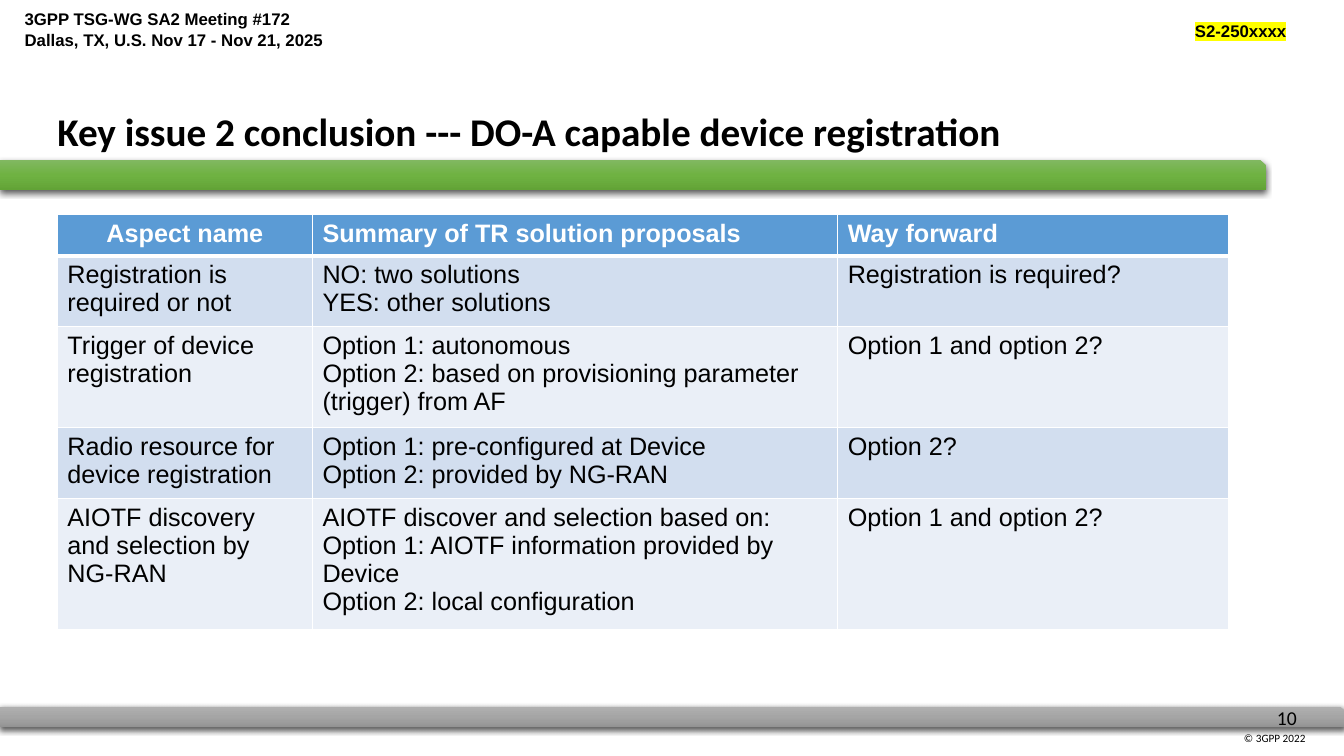
from dataclasses import dataclass

from lxml import etree
from pptx import Presentation
from pptx import util as u
from pptx.dml.color import RGBColor
from pptx.enum import shapes, text
from pptx.oxml import parse_xml
from pptx.oxml.ns import nsdecls, qn

BLACK, WHITE = "000000", "FFFFFF"
HEADER_BLUE = "5B9BD5"
BAND_FILLS = ("D2DEEF", "EAEFF7")
ALIGN = text.PP_ALIGN


@dataclass
class Bar:
    left: float
    top: float
    width: float
    height: float
    colors: tuple[str, str, str]


@dataclass
class Label:
    left: float
    top: float
    width: float
    height: float
    lines: tuple[str, ...]
    size: float
    font: str = "Calibri"
    bold: bool = False
    align: ALIGN = ALIGN.LEFT
    wrap: bool = True
    highlight: str = ""
    inset: bool = True
    line_spacing: float = 0
    anchor: text.MSO_ANCHOR = text.MSO_ANCHOR.TOP


BARS = (
    Bar(0, 505, 960, 14.4, ("AFAFAF", "A5A5A5", "939393")),
    Bar(-0.5, 114.5, 904.5, 21.5, ("81B861", "6FB242", "62A336")),
)

LABELS = (
    Label(881.5, 519, 77.5, 16.5, ("© 3GPP 2022",), 8),
    Label(905, 500.5, 31, 24.5, ("10",), 14, wrap=False),
    Label(10.5, 3, 303, 36,
          ("3GPP TSG-WG SA2 Meeting #172", "Dallas, TX, U.S. Nov 17 - Nov 21, 2025"),
          12, "Arial", True),
    Label(721.5, 11, 204.5, 21.5, ("S2-250xxxx",), 12, "Arial", True,
          ALIGN.RIGHT, highlight="FFFF00"),
    Label(41, 73, 706, 37.5,
          ("Key issue 2 conclusion --- DO-A capable device registration",),
          28, bold=True, align=ALIGN.JUSTIFY, inset=False, line_spacing=34.3,
          anchor=text.MSO_ANCHOR.BOTTOM),
)

COLUMN_WIDTHS = (182.2, 375.2, 279)
ROW_HEIGHTS = (29.2, 50.6, 72, 50.6, 93)
ROWS = (
    ("Aspect name", "Summary of TR solution proposals", "Way forward"),
    ("Registration is required or not",
     "NO: two solutions\nYES: other solutions",
     "Registration is required?"),
    ("Trigger of device registration",
     "Option 1: autonomous\n"
     "Option 2: based on provisioning parameter (trigger) from AF",
     "Option 1 and option 2?"),
    ("Radio resource for device registration",
     "Option 1: pre-configured at Device\nOption 2: provided by NG-RAN",
     "Option 2?"),
    ("AIOTF discovery and selection by NG-RAN",
     "AIOTF discover and selection based on:\n"
     "Option 1: AIOTF information provided by Device\n"
     "Option 2: local configuration",
     "Option 1 and option 2?"),
)


def rgb(color: str) -> RGBColor:
    return RGBColor.from_string(color)


def set_font(paragraph, name: str, size: float, color: str, bold: bool) -> None:
    font = paragraph.font
    font.name, font.size, font.bold = name, u.Pt(size), bold
    font.color.rgb = rgb(color)


def add_bar(slide, bar: Bar) -> None:
    """Draw a snipped bar with a vertical gradient and a soft shadow."""
    shape = slide.shapes.add_shape(
        shapes.MSO_SHAPE.SNIP_1_RECTANGLE,
        u.Pt(bar.left), u.Pt(bar.top), u.Pt(bar.width), u.Pt(bar.height))
    shape.line.fill.background()
    shape.shadow.inherit = False
    stops = "".join(
        f'<a:gs pos="{index * 50000}"><a:srgbClr val="{color}"/></a:gs>'
        for index, color in enumerate(bar.colors))
    properties = shape._element.spPr
    properties.find(qn("a:prstGeom")).addnext(parse_xml(
        f'<a:gradFill {nsdecls("a")} rotWithShape="1"><a:gsLst>{stops}</a:gsLst>'
        '<a:lin ang="5400000" scaled="0"/></a:gradFill>'))
    properties.find(qn("a:effectLst")).append(parse_xml(
        f'<a:outerShdw {nsdecls("a")} blurRad="{u.Pt(4.5)}" dist="{u.Pt(1.5)}" '
        'dir="5400000" algn="ctr" rotWithShape="0"><a:srgbClr val="000000">'
        '<a:alpha val="63000"/></a:srgbClr></a:outerShdw>'))


def add_label(slide, label: Label) -> None:
    shape = slide.shapes.add_textbox(
        u.Pt(label.left), u.Pt(label.top), u.Pt(label.width), u.Pt(label.height))
    frame = shape.text_frame
    frame.word_wrap = label.wrap
    frame.vertical_anchor = label.anchor
    if not label.inset:
        frame.margin_left = frame.margin_right = 0
        frame.margin_top = frame.margin_bottom = 0
    frame.text = "\n".join(label.lines)
    for paragraph in frame.paragraphs:
        paragraph.alignment = label.align
        if label.line_spacing:
            paragraph.line_spacing = u.Pt(label.line_spacing)
        set_font(paragraph, label.font, label.size, BLACK, label.bold)
        if label.highlight:
            run_properties = paragraph.runs[0]._r.get_or_add_rPr()
            highlight = etree.SubElement(run_properties, qn("a:highlight"))
            etree.SubElement(highlight, qn("a:srgbClr"), val=label.highlight)


def set_borders(cell, top: float, bottom: float) -> None:
    """Give the cell white borders; call before setting its fill."""
    properties = cell._tc.get_or_add_tcPr()
    for side, width in (("L", 1), ("R", 1), ("T", top), ("B", bottom)):
        properties.append(parse_xml(
            f'<a:ln{side} {nsdecls("a")} w="{u.Pt(width)}"><a:solidFill>'
            f'<a:srgbClr val="{WHITE}"/></a:solidFill></a:ln{side}>'))


def add_aspect_table(slide) -> None:
    table = slide.shapes.add_table(
        len(ROWS), len(COLUMN_WIDTHS), u.Pt(41), u.Pt(153.5),
        u.Pt(sum(COLUMN_WIDTHS)), u.Pt(sum(ROW_HEIGHTS))).table
    for column, width in zip(table.columns, COLUMN_WIDTHS):
        column.width = u.Pt(width)
    for row_index, (height, values) in enumerate(zip(ROW_HEIGHTS, ROWS)):
        table.rows[row_index].height = u.Pt(height)
        is_header = row_index == 0
        fill = HEADER_BLUE if is_header else BAND_FILLS[(row_index - 1) % 2]
        for column_index, value in enumerate(values):
            cell = table.cell(row_index, column_index)
            set_borders(cell, 3 if row_index == 1 else 1, 3 if is_header else 1)
            cell.fill.solid()
            cell.fill.fore_color.rgb = rgb(fill)
            cell.text = value
            centred = is_header and column_index == 0
            for paragraph in cell.text_frame.paragraphs:
                paragraph.alignment = ALIGN.CENTER if centred else ALIGN.LEFT
                set_font(paragraph, "Arial", 18, WHITE if is_header else BLACK, is_header)


def main() -> None:
    presentation = Presentation()
    presentation.slide_width, presentation.slide_height = u.Pt(960), u.Pt(540)
    slide = presentation.slides.add_slide(presentation.slide_layouts[6])
    for bar in BARS:
        add_bar(slide, bar)
    for label in LABELS:
        add_label(slide, label)
    add_aspect_table(slide)
    presentation.save("out.pptx")


if __name__ == "__main__":
    main()
